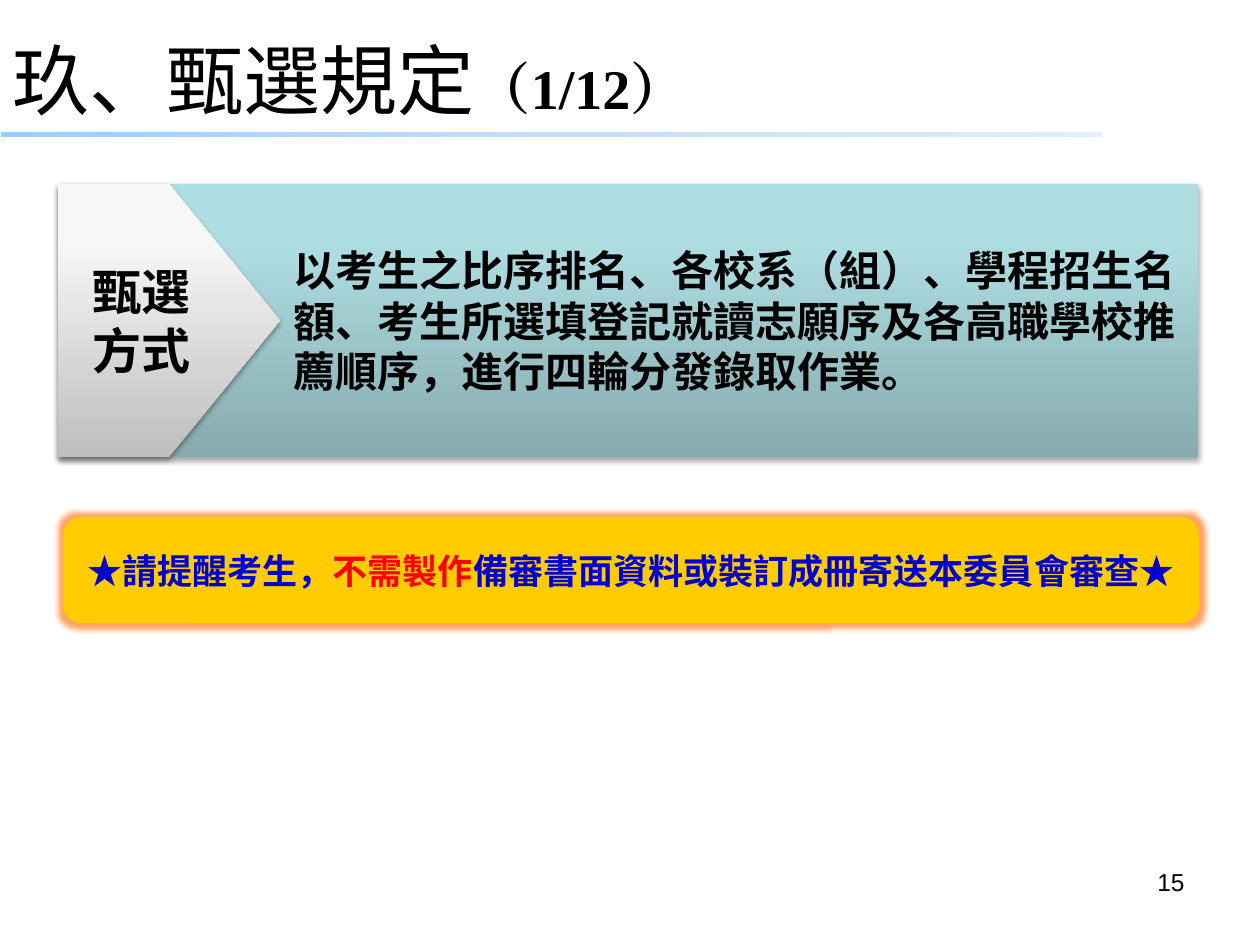
from lxml import etree
from pptx import Presentation
from pptx import util as u
from pptx.dml.color import RGBColor
from pptx.enum import shapes, text
from pptx.oxml.ns import qn

SANS, KAI, SERIF = "Noto Sans CJK SC", "Noto Sans CJK JP", "Times New Roman"
SHAPE = shapes.MSO_SHAPE
ALIGN = text.PP_ALIGN
MIDDLE = text.MSO_ANCHOR.MIDDLE


def px(n):
    return u.Emu(int(n * 914400 / 126))


def rgb(value):
    return RGBColor.from_string(value)


def child(parent, tag, **attrs):
    return etree.SubElement(parent, qn(tag), {k: str(v) for k, v in attrs.items()})


def fill_gradient(sp, stops, angle):
    """Fill with (percent, colour) stops; the angle runs clockwise."""
    sp.fill.gradient()
    grad = sp._element.spPr.find(qn("a:gradFill"))
    for old in list(grad):
        grad.remove(old)
    stop_list = child(grad, "a:gsLst")
    for percent, colour in stops:
        stop = child(stop_list, "a:gs", pos=percent * 1000)
        child(stop, "a:srgbClr", val=colour)
    child(grad, "a:lin", ang=angle * 60000, scaled=0)


def add_effect(sp, tag, colour, alpha, **attrs):
    effects = sp._element.spPr.find(qn("a:effectLst"))
    clr = child(child(effects, tag, **attrs), "a:srgbClr", val=colour)
    child(clr, "a:alpha", val=alpha * 1000)


def add_drop_shadow(sp):
    add_effect(sp, "a:outerShdw", "000000", 35, blurRad=u.Pt(3.1), dist=u.Pt(1.8),
               dir=90 * 60000, rotWithShape=0)


def add_box(s, kind, x, y, w, h):
    sp = s.shapes.add_shape(kind, px(x), px(y), px(w), px(h))
    sp.line.fill.background()
    sp.shadow.inherit = False
    return sp


def start_text(sp, align=ALIGN.LEFT, anchor=MIDDLE):
    tf = sp.text_frame
    tf.word_wrap = True
    tf.vertical_anchor = anchor
    p = tf.paragraphs[0]
    p.alignment = align
    return p


def add_run(p, words, size, font=SANS, colour="000000", bold=True):
    r = p.add_run()
    r.text = words
    r.font.size = u.Pt(size)
    r.font.bold = bold
    r.font.name = font
    r.font.color.rgb = rgb(colour)
    child(r._r.get_or_add_rPr(), "a:ea", typeface=font)


def add_title(s, x, y, w, h):
    rule = add_box(s, SHAPE.RECTANGLE, x + 1, y + 97, w - 33, 5)
    fill_gradient(rule, [(0, "9FCCF6"), (50, "C4DEF8"), (100, "E2EEFB")], 315)
    p = start_text(s.shapes.add_textbox(px(x), px(y), px(w), px(h)))
    add_run(p, "玖、甄選規定", 44, KAI, bold=False)
    add_run(p, "（1/12）", 32, SERIF)


def add_method(s, x, y, w, h):
    """Teal panel with a grey arrow label at its left."""
    label_w = 222
    panel = add_box(s, SHAPE.PENTAGON, x, y, w, h)
    panel.adjustments[0] = 0
    fill_gradient(panel, [(0, "87ABAE"), (80, "AFDEE2"), (100, "AFE0E4")], 270)
    add_drop_shadow(panel)
    p = start_text(panel)
    p._p.get_or_add_pPr().set("marL", str(px(label_w + 1)))
    add_run(p, "以考生之比序排名、各校系（組）、學程招生名額、考生所選填登記就讀志願序"
               "及各高職學校推薦順序，進行四輪分發錄取作業。", 24)

    label = add_box(s, SHAPE.PENTAGON, x, y, label_w, h)
    fill_gradient(label, [(0, "BEBEBE"), (80, "F7F7F7"), (100, "F8F8F8")], 270)
    add_drop_shadow(label)
    p = start_text(label, ALIGN.CENTER)
    add_run(p, "甄選", 28)
    p.add_line_break()
    add_run(p, "方式", 28)


def add_reminder(s, x, y, w, h):
    sp = add_box(s, SHAPE.ROUNDED_RECTANGLE, x, y, w, h)
    sp.fill.solid()
    sp.fill.fore_color.rgb = rgb("FFCC00")
    add_effect(sp, "a:glow", "FF6600", 60, rad=u.Pt(6))
    p = start_text(sp, ALIGN.CENTER)
    for words, colour in [("★請提醒考生，", "0000CC"), ("不需製作", "FF0000"),
                          ("備審書面資料或裝訂成冊寄送本委員會審查★", "0000CC")]:
        add_run(p, words, 20, colour=colour)


def add_page_number(s, x, y, w, h):
    box = s.shapes.add_textbox(px(x), px(y), px(w), px(h))
    p = start_text(box, ALIGN.RIGHT, text.MSO_ANCHOR.TOP)
    add_run(p, "15", 14, "Arial", bold=False)


def main():
    prs = Presentation()
    prs.slide_width, prs.slide_height = px(1260), px(945)
    s = prs.slides.add_slide(prs.slide_layouts[6])
    add_title(s, 0, 35, 1134, 87)
    add_method(s, 58, 184, 1140, 273)
    add_reminder(s, 63, 517, 1136, 106)
    add_page_number(s, 903, 861, 294, 66)
    prs.save("out.pptx")


if __name__ == "__main__":
    main()
